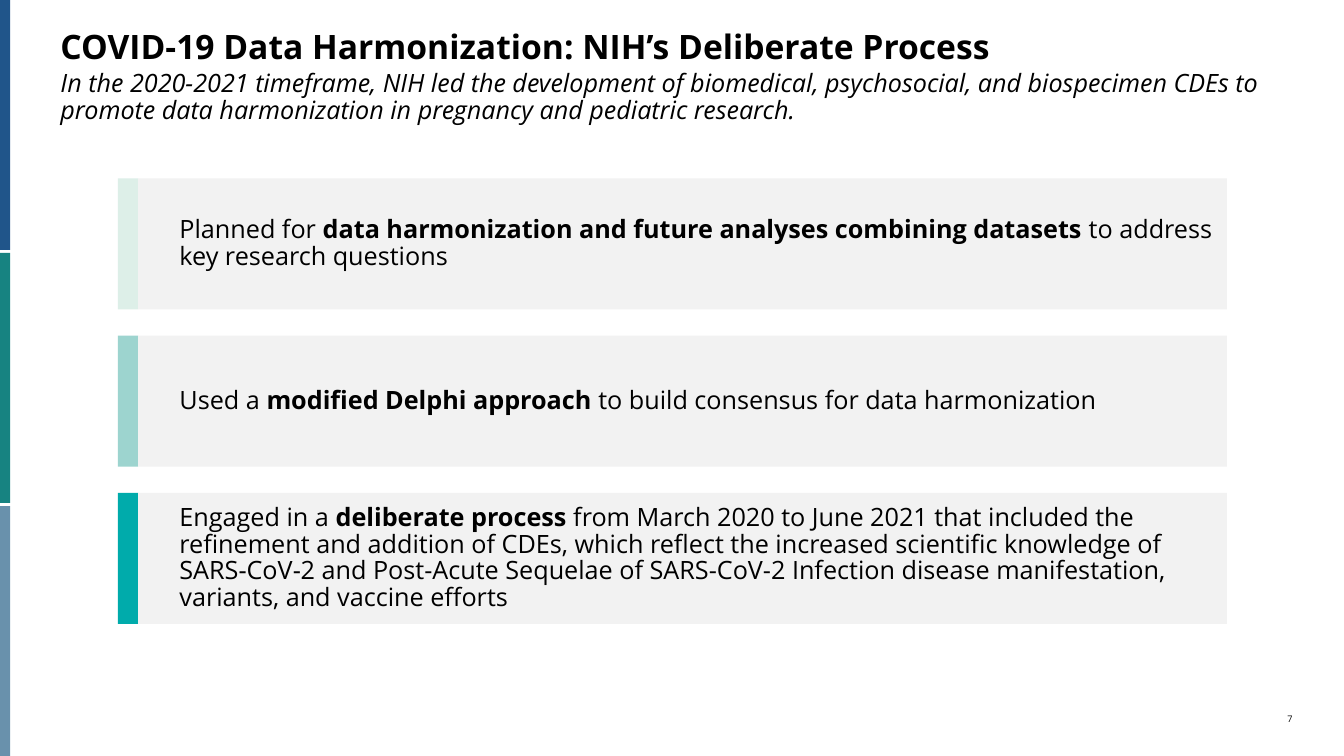
from pptx import Presentation
from pptx.dml.color import RGBColor
from pptx.enum import shapes, text
from pptx.util import Inches, Pt

FONT = "Open Sans"
BLACK = RGBColor(0x00, 0x00, 0x00)
CARD_GRAY = RGBColor(0xF2, 0xF2, 0xF2)
BLUE = RGBColor(0x20, 0x55, 0x8A)
GREEN = RGBColor(0x17, 0x83, 0x81)
STEEL = RGBColor(0x69, 0x91, 0xAC)
MINT = RGBColor(0xDD, 0xEF, 0xE8)
AQUA = RGBColor(0x9D, 0xD4, 0xCF)
TEAL = RGBColor(0x00, 0xAB, 0xAB)

# Accent colour, then the text before, in and after the bold phrase
CARDS = [
    (MINT, "Planned for ",
     "data harmonization and future analyses combining datasets ",
     "to address key research questions"),
    (AQUA, "Used a ", "modified Delphi approach",
     " to build consensus for data harmonization"),
    (TEAL, "Engaged in a ", "deliberate process ",
     "from March 2020 to June 2021 that included the refinement and addition "
     "of CDEs, which reflect the increased scientific knowledge of SARS‑CoV‑2 "
     "and Post-Acute Sequelae of SARS-CoV-2 Infection disease manifestation, "
     "variants, and vaccine efforts"),
]


def write(paragraph, words, size=18, bold=False, italic=False):
    """Add one formatted run to a paragraph."""
    run = paragraph.add_run()
    run.text = words
    run.font.name = FONT
    run.font.size = Pt(size)
    run.font.bold = bold
    run.font.italic = italic
    run.font.color.rgb = BLACK


def place(shape, left, top, width, height):
    shape.left, shape.top = Inches(left), Inches(top)
    shape.width, shape.height = Inches(width), Inches(height)


def set_frame(shape, anchor, margin=0):
    """Prepare a shape's text frame and return its first paragraph."""
    frame = shape.text_frame
    frame.word_wrap = True
    frame.auto_size = text.MSO_AUTO_SIZE.NONE
    frame.vertical_anchor = anchor
    frame.margin_left = frame.margin_right = Inches(margin)
    frame.margin_top = frame.margin_bottom = Inches(margin / 2)
    paragraph = frame.paragraphs[0]
    paragraph.alignment = text.PP_ALIGN.LEFT
    return paragraph


def add_block(slide, left, top, width, height, color):
    block = slide.shapes.add_shape(
        shapes.MSO_SHAPE.RECTANGLE,
        Inches(left), Inches(top), Inches(width), Inches(height))
    block.shadow.inherit = False
    block.fill.solid()
    block.fill.fore_color.rgb = color
    block.line.fill.background()
    return block


def add_side_stripe(slide, left, top, width, height):
    colors = [BLUE, GREEN, STEEL]
    gap = 0.03
    part = (height - gap * (len(colors) - 1)) / len(colors)
    for index, color in enumerate(colors):
        add_block(slide, left, top + index * (part + gap), width, part, color)


def add_heading(slide, left, top, width):
    # Title
    title = slide.shapes.title
    place(title, left, top, width, 0.4)
    write(set_frame(title, text.MSO_ANCHOR.MIDDLE),
          "COVID-19 Data Harmonization: NIH’s Deliberate Process",
          size=24, bold=True)
    # Subtitle
    subtitle = slide.shapes.add_textbox(0, 0, 0, 0)
    place(subtitle, left, top + 0.44, width, 0.5)
    paragraph = set_frame(subtitle, text.MSO_ANCHOR.TOP)
    paragraph.line_spacing = 0.9
    write(paragraph,
          "In the 2020-2021 timeframe, NIH led the development of biomedical, "
          "psychosocial, and biospecimen CDEs to promote data harmonization in "
          "pregnancy and pediatric research.", italic=True)


def add_card(slide, left, top, width, height, card):
    color, before, phrase, after = card
    accent_width = 0.2
    add_block(slide, left, top, accent_width, height, color)
    panel = add_block(slide, left + accent_width, top,
                      width - accent_width, height, CARD_GRAY)
    paragraph = set_frame(panel, text.MSO_ANCHOR.MIDDLE, margin=0.1)
    panel.text_frame.margin_left = Inches(0.41)
    paragraph.line_spacing = 0.88
    write(paragraph, before)
    write(paragraph, phrase, bold=True)
    write(paragraph, after)


def add_cards(slide, left, top, width, card_height, gap):
    for index, card in enumerate(CARDS):
        add_card(slide, left, top + index * (card_height + gap),
                 width, card_height, card)


def add_page_number(slide, left, top, width, height):
    box = slide.shapes.add_textbox(0, 0, 0, 0)
    place(box, left, top, width, height)
    paragraph = set_frame(box, text.MSO_ANCHOR.TOP)
    paragraph.alignment = text.PP_ALIGN.RIGHT
    write(paragraph, "7", size=6.5)


def main():
    presentation = Presentation()
    presentation.slide_width = Inches(13.33)
    presentation.slide_height = Inches(7.5)
    slide = presentation.slides.add_slide(presentation.slide_layouts[5])
    add_side_stripe(slide, 0, 0, 0.1, 7.5)
    add_heading(slide, 0.6, 0.26, 12.46)
    add_cards(slide, 1.17, 1.77, 11, card_height=1.3, gap=0.26)
    add_page_number(slide, 12.48, 7.08, 0.34, 0.11)
    presentation.save("out.pptx")


if __name__ == "__main__":
    main()
